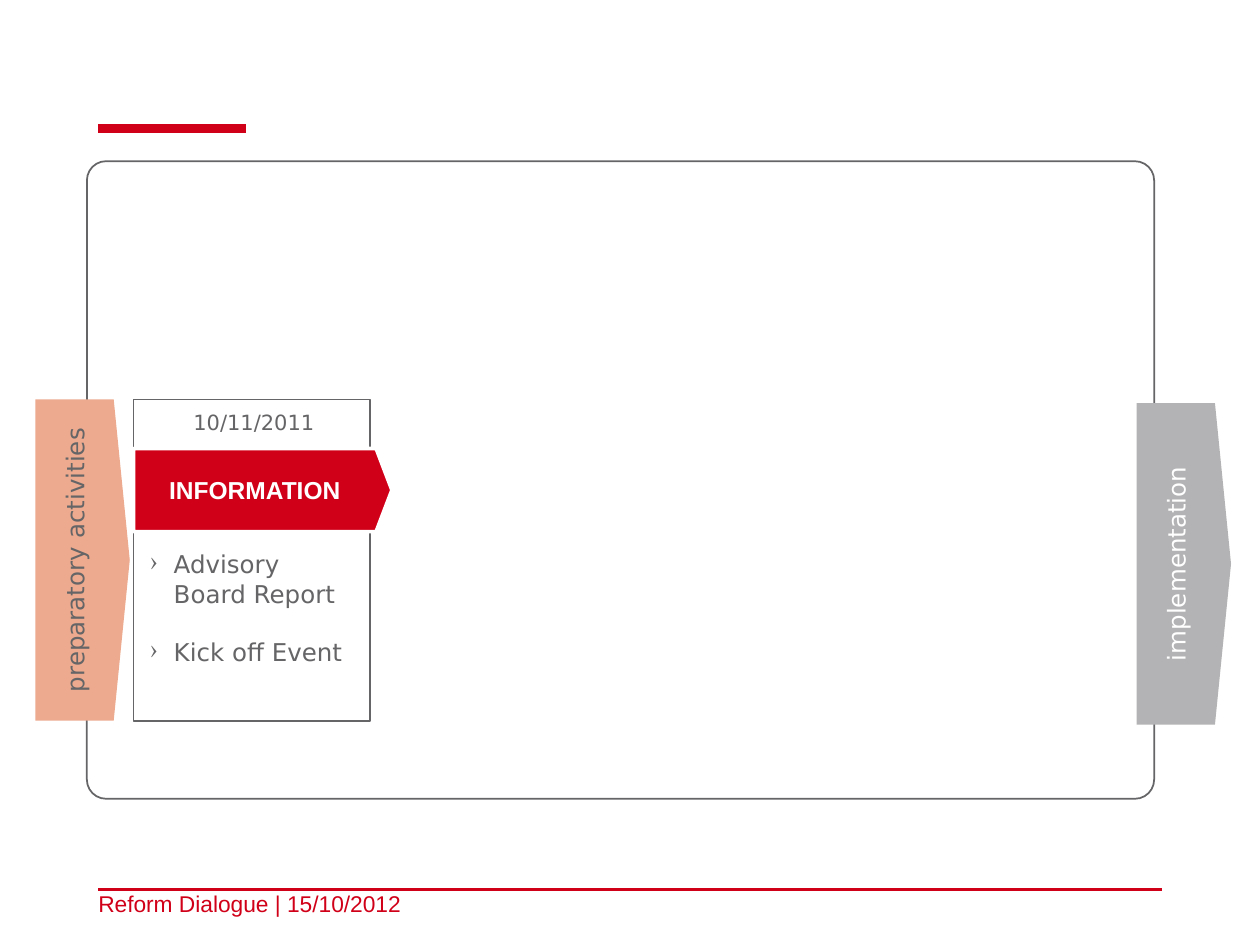
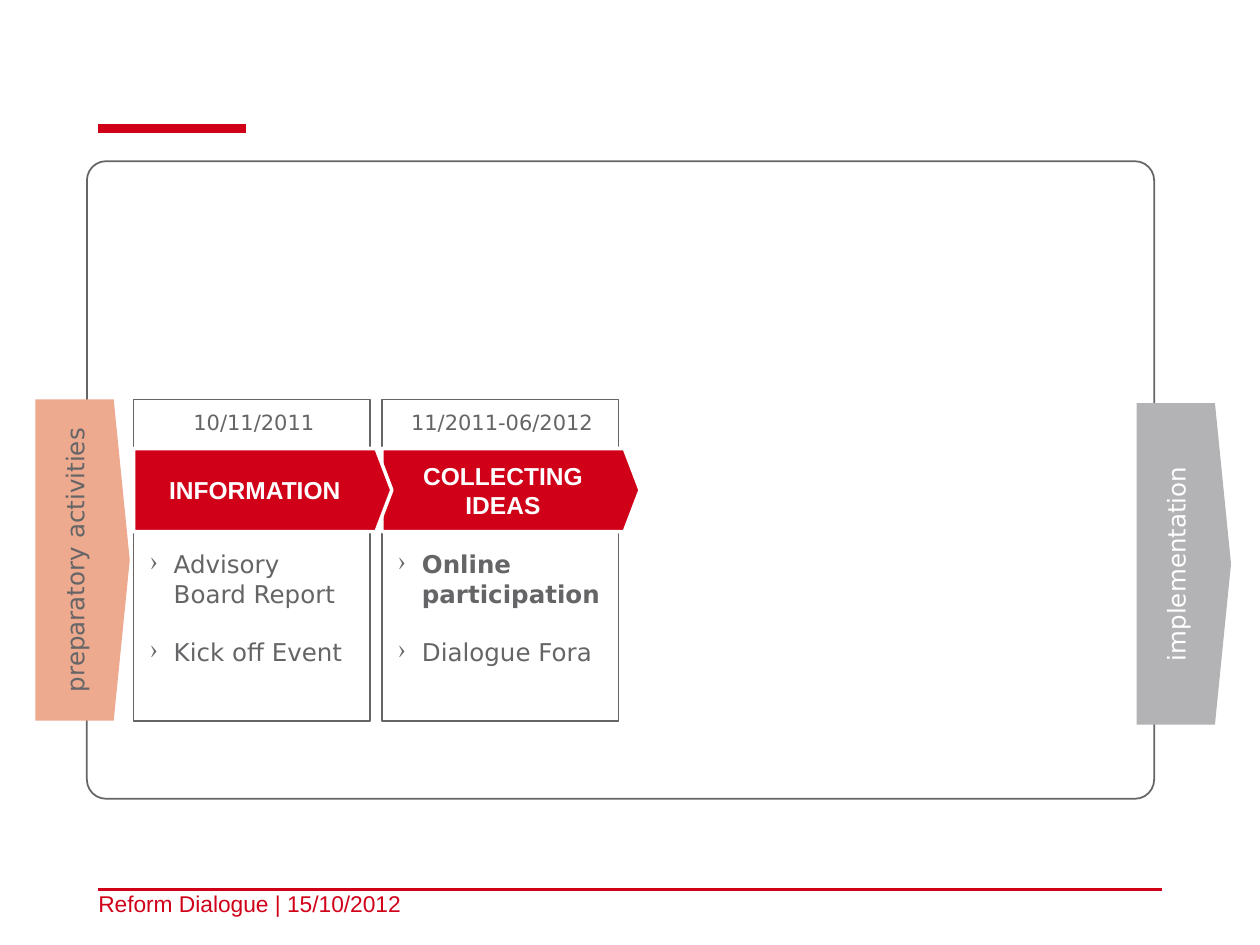
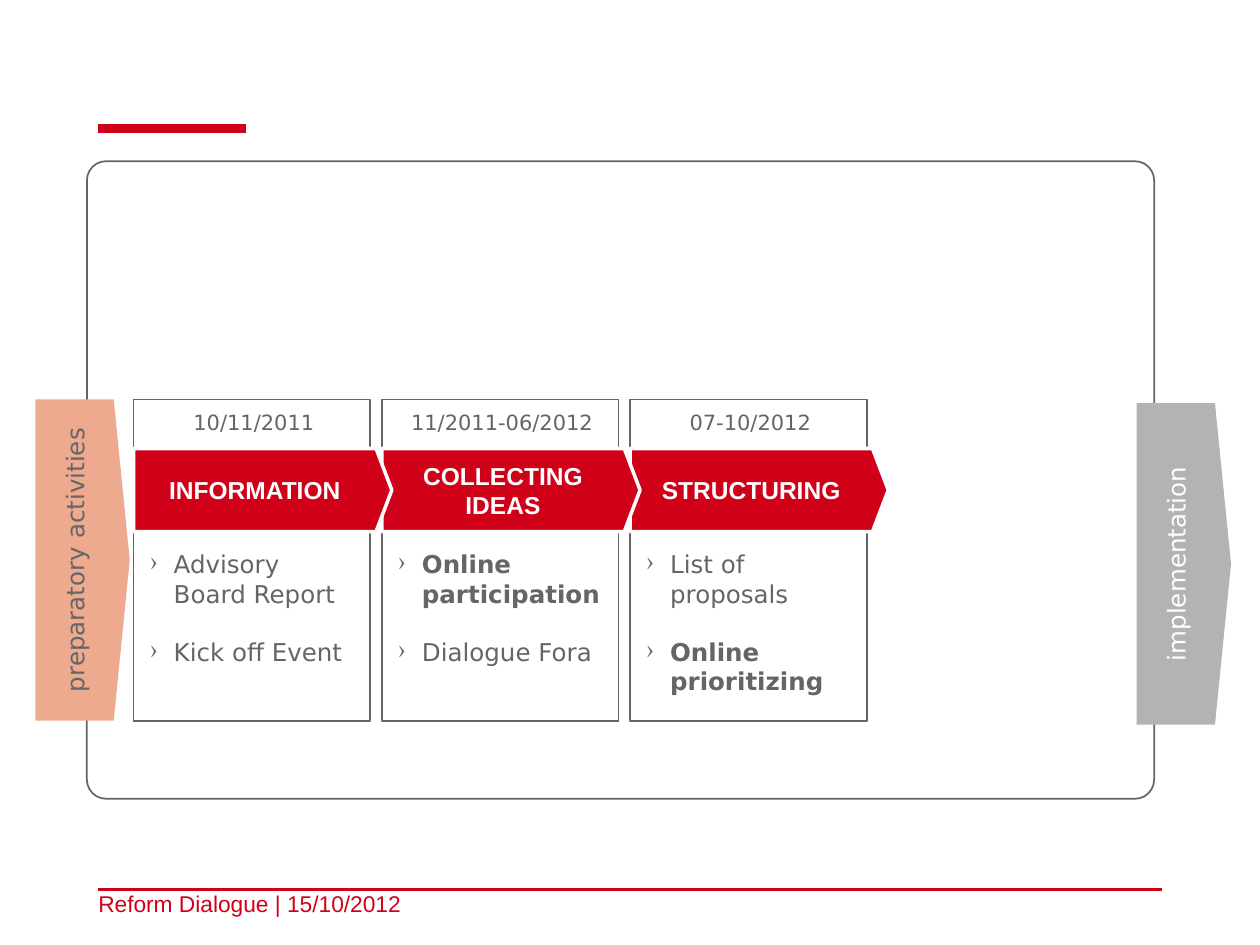
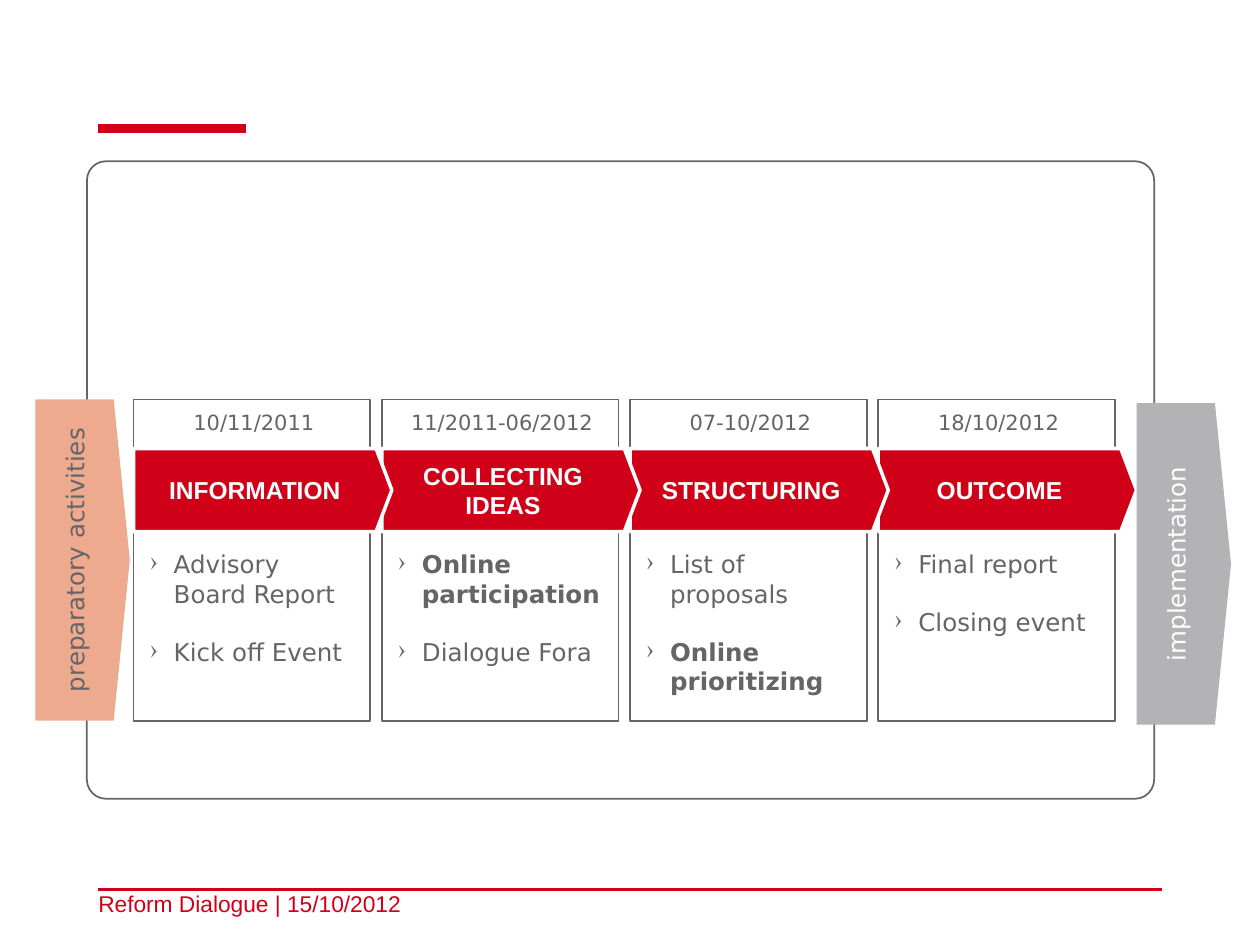
from dataclasses import dataclass

from lxml import etree
from pptx import Presentation
from pptx import util as u
from pptx.dml.color import RGBColor
from pptx.enum import shapes, text
from pptx.oxml.ns import qn

COLOURS = {
    "red": "D10019",
    "grey": "656567",
    "salmon": "EDAA8E",
    "silver": "B3B3B5",
    "white": "FFFFFF",
}
BODY_FONT, HEAD_FONT = "DejaVu Sans", "Arial"
CELL = 0.1  # inches: the slide is a grid of 100 columns and 75 rows
COLUMNS, ROWS = 100, 75
STAGE_PITCH = 19.7
HANG = 1.9
LINE_ROWS = 2.35
ITEM_GAP = 16.3

# date, heading, items as (wording, bold), text lines including the gap
STAGES = [
    ("10/11/2011", "INFORMATION",
     [("Advisory Board Report", False), ("Kick off Event", False)], 4),
    ("11/2011-06/2012", "COLLECTING IDEAS",
     [("Online participation", True), ("Dialogue Fora", False)], 4),
    ("07-10/2012", "STRUCTURING",
     [("List of proposals", False), ("Online prioritizing", True)], 5),
    ("18/10/2012", "OUTCOME",
     [("Final report", False), ("Closing event", False)], 3),
]


@dataclass
class Box:
    """A region in grid columns and rows."""
    left: float
    top: float
    width: float
    height: float

    def region(self, right, down, width, height):
        return Box(self.left + right, self.top + down, width, height)

    def lengths(self):
        return [cells(n) for n in (self.left, self.top, self.width, self.height)]


SLIDE = Box(0, 0, COLUMNS, ROWS)


def cells(count):
    return u.Inches(count * CELL)


def colour(name):
    return RGBColor.from_string(COLOURS[name])


def style(para, size, name, font=BODY_FONT, bold=False):
    para.font.size = u.Pt(size)
    para.font.name = font
    para.font.bold = bold
    para.font.color.rgb = colour(name)


def add_rule(page, box, weight):
    """Draw a red line along the top edge of the box."""
    left, top, width, _ = box.lengths()
    rule = page.shapes.add_connector(
        shapes.MSO_CONNECTOR.STRAIGHT, left, top, left + width, top)
    rule.line.color.rgb = colour("red")
    rule.line.width = u.Pt(weight)
    etree.SubElement(rule._element.spPr, qn("a:effectLst"))


def add_panel(parent, box, kind, fill=None, line=None, weight=1):
    panel = parent.shapes.add_shape(kind, *box.lengths())
    panel.shadow.inherit = False
    if fill:
        panel.fill.solid()
        panel.fill.fore_color.rgb = colour(fill)
    else:
        panel.fill.background()
    if line:
        panel.line.color.rgb = colour(line)
        panel.line.width = u.Pt(weight)
    else:
        panel.line.fill.background()
    return panel


def add_arrow(parent, box, wording, fill, ink, tip, line=None,
              font=BODY_FONT, bold=False):
    arrow = add_panel(parent, box, shapes.MSO_SHAPE.RIGHT_ARROW, fill, line, 2)
    arrow.adjustments[0], arrow.adjustments[1] = 1, tip
    frame = arrow.text_frame
    frame.word_wrap = True
    frame.vertical_anchor = text.MSO_ANCHOR.MIDDLE
    para = frame.paragraphs[0]
    para.text = wording
    para.alignment = text.PP_ALIGN.CENTER
    style(para, 14, ink, font, bold)
    return arrow


def add_side_arrow(page, box, wording, fill, ink):
    arrow = add_arrow(page, box, wording, fill, ink, 0.17)
    arrow.text_frame._txBody.bodyPr.set("vert", "vert270")


def add_text_frame(parent, box):
    frame = parent.shapes.add_textbox(*box.lengths()).text_frame
    frame.word_wrap = True
    return frame


def add_bullet(para):
    properties = para._p.get_or_add_pPr()
    properties.set("marL", str(cells(HANG)))
    properties.set("indent", str(-cells(HANG)))
    etree.SubElement(properties, qn("a:buChar")).set("char", "›")


def add_date(parent, box, wording):
    frame = add_text_frame(parent, box)
    frame.auto_size = text.MSO_AUTO_SIZE.SHAPE_TO_FIT_TEXT
    para = frame.paragraphs[0]
    para.text = wording
    para.alignment = text.PP_ALIGN.CENTER
    style(para, 12, "grey")


def add_items(parent, box, items):
    frame = add_text_frame(parent, box)
    frame.auto_size = text.MSO_AUTO_SIZE.SHAPE_TO_FIT_TEXT
    for index, (wording, bold) in enumerate(items):
        para = frame.add_paragraph() if index else frame.paragraphs[0]
        para.text = wording
        add_bullet(para)
        if index:
            para.space_before = u.Pt(ITEM_GAP)
        style(para, 14, "grey", bold=bold)


def add_stage(page, box, stage):
    """Group one stage: outlined panel, date, items and heading arrow."""
    date, heading, items, lines = stage
    group = page.shapes.add_group_shape()
    add_panel(group, box, shapes.MSO_SHAPE.RECTANGLE, line="grey")
    add_date(group, box.region(0.3, 0.3, 18.5, 3), date)
    add_items(group, box.region(0.3, 11.4, 18.5, 1 + lines * LINE_ROWS), items)
    add_arrow(group, box.region(0, 3.9, 20.5, 6.6), heading, "red", "white",
              0.19, line="white", font=HEAD_FONT, bold=True)


def add_footer(page, box):
    frame = add_text_frame(page, box)
    frame.margin_left = frame.margin_right = 0
    frame.margin_top = frame.margin_bottom = 0
    para = frame.paragraphs[0]
    para.text = "Reform Dialogue | 15/10/2012"
    style(para, 13, "red", HEAD_FONT)


def add_process_page(deck, stages):
    page = deck.slides.add_slide(deck.slide_layouts[6])
    add_rule(page, SLIDE.region(7.8, 10.2, 11.7, 0), 5)
    add_rule(page, SLIDE.region(7.8, 70.6, 84.4, 0), 1.5)
    outline = add_panel(page, SLIDE.region(6.9, 12.8, 84.7, 50.6),
                        shapes.MSO_SHAPE.ROUNDED_RECTANGLE, line="grey")
    outline.adjustments[0] = 0.03
    add_side_arrow(page, SLIDE.region(2.8, 31.7, 7.5, 25.5),
                   "preparatory activities", "salmon", "grey")
    # Later stages lie behind, so each arrow tip overlaps the next stage.
    for index, stage in reversed(list(enumerate(stages))):
        add_stage(page, SLIDE.region(10.6 + index * STAGE_PITCH, 31.7, 18.8, 25.5),
                  stage)
    add_side_arrow(page, SLIDE.region(90.2, 32, 7.5, 25.5),
                   "implementation", "silver", "white")
    add_footer(page, SLIDE.region(7.8, 70.6, 74.2, 2.2))


def main():
    deck = Presentation()
    deck.slide_width, deck.slide_height = cells(COLUMNS), cells(ROWS)
    for count in range(1, len(STAGES) + 1):
        add_process_page(deck, STAGES[:count])
    deck.save("out.pptx")


if __name__ == "__main__":
    main()
